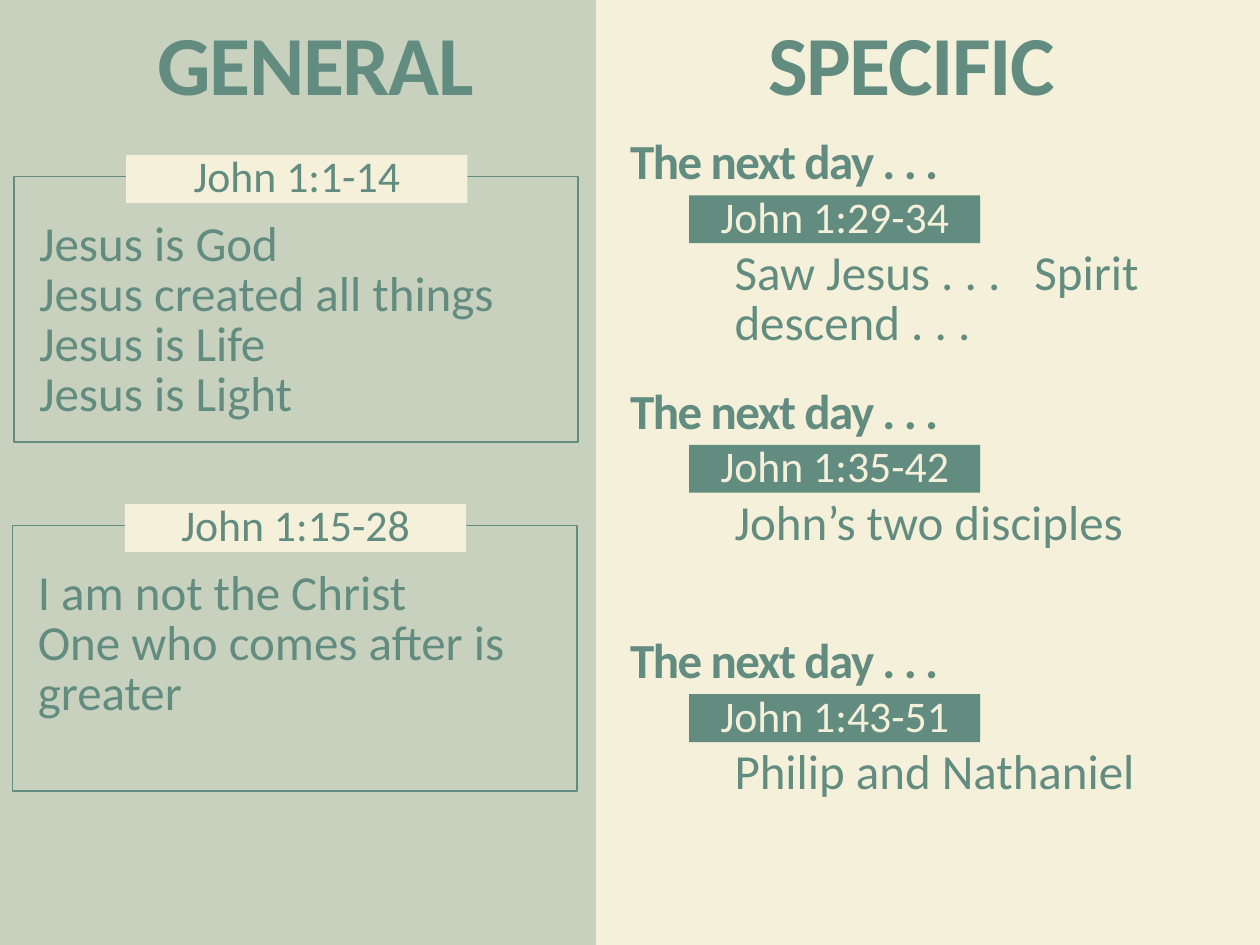
from lxml import etree
from pptx import Presentation
from pptx.dml.color import RGBColor
from pptx.enum.shapes import MSO_SHAPE as Shape
from pptx.enum.text import MSO_ANCHOR as Anchor, PP_ALIGN as Align
from pptx.oxml.ns import qn
from pptx.util import Inches, Pt

COLORS = {"green": "638C80", "cream": "F4F0D9"}
FONT = "Calibri"

TITLES = [(0.52, "GENERAL"), (5.25, "SPECIFIC")]
GENERAL = [
    (0.11, "John 1:1-14", ["Jesus is God", "Jesus created all things", "Jesus is Life", "Jesus is Light"]),
    (0.1, "John 1:15-28", ["I am not the Christ", "One who comes after is greater"]),
]
DAY_HEADING = "The next day . . ."
SPECIFIC = [
    ("John 1:29-34", ["Saw Jesus . . .", "Spirit descend . . ."], 0.8),
    ("John 1:35-42", ["John’s two disciples"], 0.4),
    ("John 1:43-51", ["Philip and Nathaniel"], 0.4),
]
CARD_TOP, CARD_PITCH = 1.4, 2.77
DAY_TOP, DAY_PITCH = 1.09, 1.98
TAB_STOP = 2.38

presentation = Presentation()
presentation.slide_width, presentation.slide_height = Inches(10), Inches(7.5)
slide = presentation.slides.add_slide(presentation.slide_layouts[6])


def color(name):
    return RGBColor.from_string(COLORS[name])


def add_box(left, top, width, height, fill=None, line=None, alpha=None):
    shape = slide.shapes.add_shape(
        Shape.RECTANGLE, Inches(left), Inches(top), Inches(width), Inches(height))
    shape.shadow.inherit = False
    if fill:
        shape.fill.solid()
        shape.fill.fore_color.rgb = color(fill)
    else:
        shape.fill.background()
    if line:
        shape.line.color.rgb = color(line)
        shape.line.width = Pt(1)
    else:
        shape.line.fill.background()
    if alpha:
        fill_color = shape.fill._xPr.find(".//" + qn("a:srgbClr"))
        etree.SubElement(fill_color, qn("a:alpha"), val=str(alpha * 1000))
    return shape


def add_textbox(left, top, width, height):
    return slide.shapes.add_textbox(Inches(left), Inches(top), Inches(width), Inches(height))


def write(shape, lines, size=28, ink="green", bold=False, align=Align.LEFT,
          line_spacing=0.9, letter_spacing=None, tab_stop=None):
    frame = shape.text_frame
    frame.word_wrap = True
    frame.vertical_anchor = Anchor.TOP
    frame.margin_left = frame.margin_top = frame.margin_right = frame.margin_bottom = 0
    for index, line in enumerate(lines):
        paragraph = frame.add_paragraph() if index else frame.paragraphs[0]
        paragraph.alignment = align
        paragraph.line_spacing = line_spacing
        if tab_stop:
            tabs = etree.SubElement(paragraph._p.get_or_add_pPr(), qn("a:tabLst"))
            etree.SubElement(tabs, qn("a:tab"), pos=str(Inches(tab_stop)), algn="l")
        run = paragraph.add_run()
        run.text = line
        run.font.name, run.font.size, run.font.bold = FONT, Pt(size), bold
        run.font.color.rgb = color(ink)
        if letter_spacing:
            run.font._element.set("spc", str(round(letter_spacing * 100)))


def add_label(text, left, top, width, fill, ink):
    write(add_box(left, top, width, 0.38, fill=fill), [text], size=25, ink=ink, align=Align.CENTER)


slide.background.fill.solid()
slide.background.fill.fore_color.rgb = color("cream")
add_box(0, 0, 4.73, 7.5, fill="green", alpha=30)

for left, title in TITLES:
    write(add_textbox(left, 0.18, 3.97, 0.73), [title], size=48, bold=True,
          align=Align.CENTER, letter_spacing=-0.8)

for row, (left, passage, points) in enumerate(GENERAL):
    top = CARD_TOP + row * CARD_PITCH
    write(add_textbox(left + 0.2, top + 0.36, 4.18, 1.6), points, line_spacing=0.85)
    add_box(left, top, 4.48, 2.11, line="green")
    add_label(passage, left + 0.89, top - 0.17, 2.71, fill="cream", ink="green")

for row, (passage, parts, height) in enumerate(SPECIFIC):
    top = DAY_TOP + row * DAY_PITCH
    write(add_textbox(5, top, 3.18, 0.42), [DAY_HEADING], bold=True, letter_spacing=-0.8)
    add_label(passage, 5.47, top + 0.46, 2.31, fill="green", ink="cream")
    write(add_textbox(5.83, top + 0.9, 3.6, height), ["\t".join(parts)],
          line_spacing=0.85, tab_stop=TAB_STOP if len(parts) > 1 else None)

presentation.save("out.pptx")
